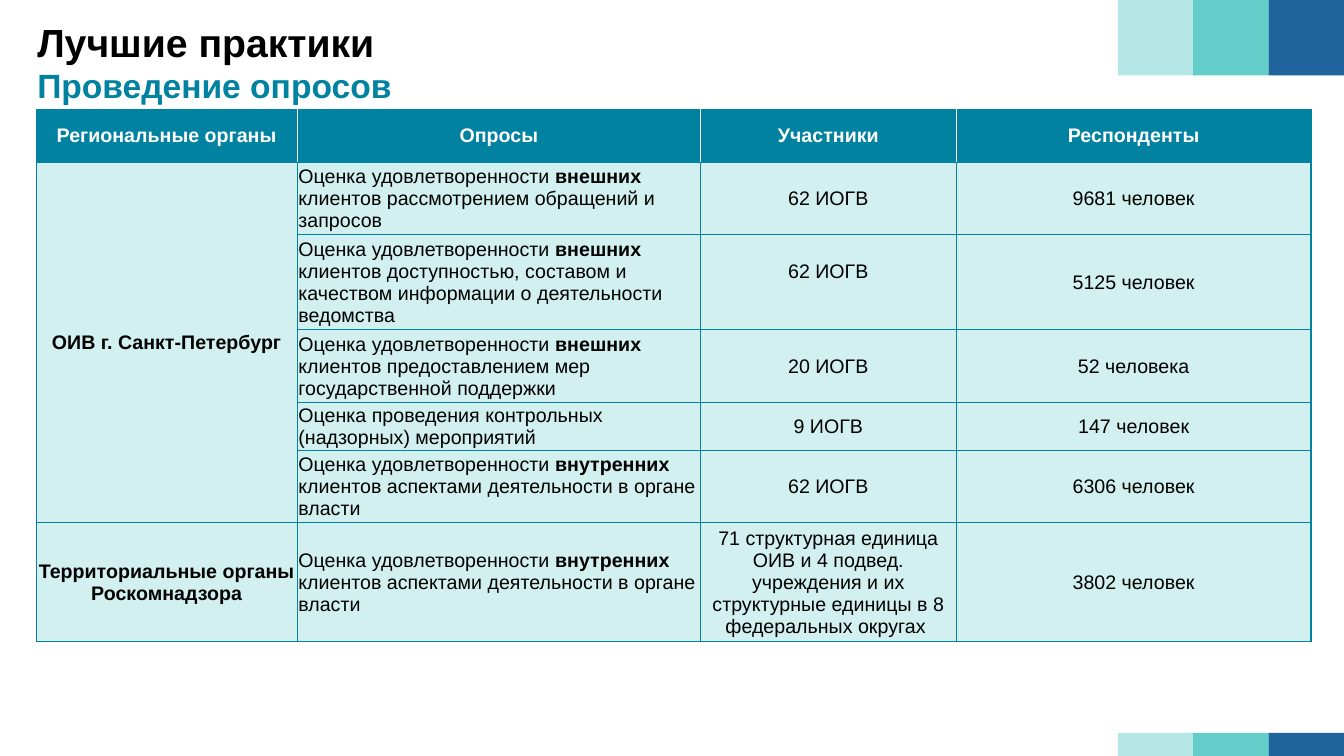
"""Build a slide on survey practice: two headings, corner squares and a table."""
from dataclasses import dataclass

from lxml import etree
from pptx import Presentation
from pptx import util as u
from pptx.dml import color as dml
from pptx.enum import shapes, text
from pptx.oxml import ns

TEAL, WHITE, BLACK = "0082A0", "FFFFFF", "000000"
MINT, MINT_ALPHA = "B5E7E6", 62
SIDES = ("L", "R", "T", "B")


@dataclass
class Heading:
    label: str
    top: float
    width: float
    height: float
    size: int
    color: str
    wrap: bool


@dataclass
class Band:
    top: float
    height: float


@dataclass
class Tint:
    color: str
    alpha: int


@dataclass
class Survey:
    body: str
    topic: str
    members: str
    replies: str
    height: float
    members_bottom: float = 0


HEADINGS = [
    Heading("Лучшие практики", 0.48, 9.12, 1.35, 28, BLACK, False),
    Heading("Проведение опросов", 1.63, 21.69, 1.17, 24, TEAL, True),
]
BANDS = [Band(0, 1.9), Band(18.47, 0.58)]
TINTS = [Tint("00AEA9", 29), Tint("00AEA9", 61), Tint("004F8F", 88)]
COLUMNS = {
    "Региональные органы": 6.58,
    "Опросы": 10.16,
    "Участники": 6.45,
    "Респонденты": 8.94,
}
HEADER_HEIGHT = 1.32
CITY_ROWS = 5
SURVEYS = [
    Survey("*ОИВ г. Санкт-Петербург*",
           "Оценка удовлетворенности *внешних* клиентов рассмотрением обращений и запросов",
           "62 ИОГВ", "9681 человек", 1.82),
    Survey("",
           "Оценка удовлетворенности *внешних* клиентов доступностью, составом и "
           "качеством информации о деятельности ведомства",
           "62 ИОГВ", "5125 человек", 2.39, 0.58),
    Survey("",
           "Оценка удовлетворенности *внешних* клиентов предоставлением мер "
           "государственной поддержки",
           "20 ИОГВ", "52 человека", 1.82),
    Survey("", "Оценка проведения контрольных (надзорных) мероприятий",
           "9 ИОГВ", "147 человек", 1.21),
    Survey("",
           "Оценка удовлетворенности *внутренних* клиентов аспектами деятельности "
           "в органе власти",
           "62 ИОГВ", "6306 человек", 1.82),
    Survey("*Территориальные органы Роскомнадзора*",
           "Оценка удовлетворенности *внутренних* клиентов аспектами деятельности "
           "в органе власти",
           "71 структурная единица ОИВ и 4 подвед. учреждения и их структурные "
           "единицы в 8 федеральных округах ",
           "3802 человек", 2.97),
]


def rgb(code: str) -> dml.RGBColor:
    """Turn a hex string into a colour."""
    return dml.RGBColor.from_string(code)


def assign(target, values: dict) -> None:
    """Set each named attribute on the target."""
    for name, value in values.items():
        setattr(target, name, value)


def paint(fill, holder, code: str, alpha: int = 100) -> None:
    """Fill with a colour at the given opacity in percent."""
    fill.solid()
    fill.fore_color.rgb = rgb(code)
    if alpha < 100:
        clr = holder.find(ns.qn("a:solidFill")).find(ns.qn("a:srgbClr"))
        etree.SubElement(clr, ns.qn("a:alpha"), val=str(alpha * 1000))


def write(p, marked: str, size: int, code: str) -> None:
    """Add runs to a paragraph, with bold parts between asterisks."""
    for i, part in enumerate(marked.split("*")):
        if part:
            r = p.add_run()
            r.text = part
            assign(r.font, {"name": "Arial", "size": u.Pt(size), "bold": i % 2 == 1})
            r.font.color.rgb = rgb(code)


def add_heading(s, h: Heading) -> None:
    """Draw one heading."""
    sp = s.shapes.add_textbox(u.Cm(0.69), u.Cm(h.top), u.Cm(h.width), u.Cm(h.height))
    tf = sp.text_frame
    assign(tf, {"word_wrap": h.wrap, "auto_size": text.MSO_AUTO_SIZE.SHAPE_TO_FIT_TEXT})
    p = tf.paragraphs[0]
    p.line_spacing = 0.9
    write(p, f"*{h.label}*", h.size, h.color)


def add_band(s, band: Band, left: float = 28.17, step: float = 1.9) -> None:
    """Draw a row of tinted blocks at the right edge."""
    for i, tint in enumerate(TINTS):
        sp = s.shapes.add_shape(shapes.MSO_SHAPE.RECTANGLE, u.Cm(left + i * step),
                                u.Cm(band.top), u.Cm(step), u.Cm(band.height))
        sp.shadow.inherit = False
        sp.line.fill.background()
        paint(sp.fill, sp.element.spPr, tint.color, tint.alpha)


def add_borders(tc_pr, codes: dict[str, str]) -> None:
    """Draw the four borders of a cell."""
    for side in SIDES:
        ln = etree.SubElement(tc_pr, ns.qn(f"a:ln{side}"), w=str(u.Pt(1)))
        fill = etree.SubElement(ln, ns.qn("a:solidFill"))
        etree.SubElement(fill, ns.qn("a:srgbClr"), val=codes[side])


def style_cell(cell, marked: str, header: bool, centred: bool,
               codes: dict[str, str], bottom: float = 0) -> None:
    """Write and format one table cell."""
    inset = u.Cm(0 if header else 0.03)
    assign(cell, {"margin_left": inset, "margin_right": inset, "margin_top": inset,
                  "margin_bottom": u.Cm(bottom),
                  "vertical_anchor": text.MSO_ANCHOR.MIDDLE})
    p = cell.text_frame.paragraphs[0]
    p.alignment = text.PP_ALIGN.CENTER if centred else text.PP_ALIGN.LEFT
    write(p, marked, 14, WHITE if header else BLACK)
    tc_pr = cell._tc.get_or_add_tcPr()
    add_borders(tc_pr, codes)
    paint(cell.fill, tc_pr, TEAL if header else MINT, 100 if header else MINT_ALPHA)


def add_survey_table(s) -> None:
    """Draw the table of surveys."""
    heights = [HEADER_HEIGHT] + [row.height for row in SURVEYS]
    tbl = s.shapes.add_table(len(heights), len(COLUMNS), u.Cm(0.91), u.Cm(2.77),
                             u.Cm(sum(COLUMNS.values())), u.Cm(sum(heights))).table
    assign(tbl, {"first_row": False, "horz_banding": False})
    for col, width in zip(tbl.columns, COLUMNS.values()):
        col.width = u.Cm(width)
    for row, height in zip(tbl.rows, heights):
        row.height = u.Cm(height)
    plain = dict.fromkeys(SIDES, TEAL)
    last = len(COLUMNS) - 1
    for c, label in enumerate(COLUMNS):
        codes = plain | {"L": WHITE if c else TEAL, "R": WHITE if c < last else TEAL}
        style_cell(tbl.cell(0, c), f"*{label}*", True, True, codes)
    for r, row in enumerate(SURVEYS, 1):
        for c, marked in enumerate((row.body, row.topic, row.members, row.replies)):
            bottom = row.members_bottom if c == 2 else 0
            style_cell(tbl.cell(r, c), marked, False, c != 1, plain, bottom)
    tbl.cell(1, 0).merge(tbl.cell(CITY_ROWS, 0))


def main() -> None:
    """Build and save the slide."""
    prs = Presentation()
    assign(prs, {"slide_width": u.Cm(33.87), "slide_height": u.Cm(19.05)})
    s = prs.slides.add_slide(prs.slide_layouts[6])
    for heading in HEADINGS:
        add_heading(s, heading)
    for band in BANDS:
        add_band(s, band)
    add_survey_table(s)
    prs.save("out.pptx")


if __name__ == "__main__":
    main()
